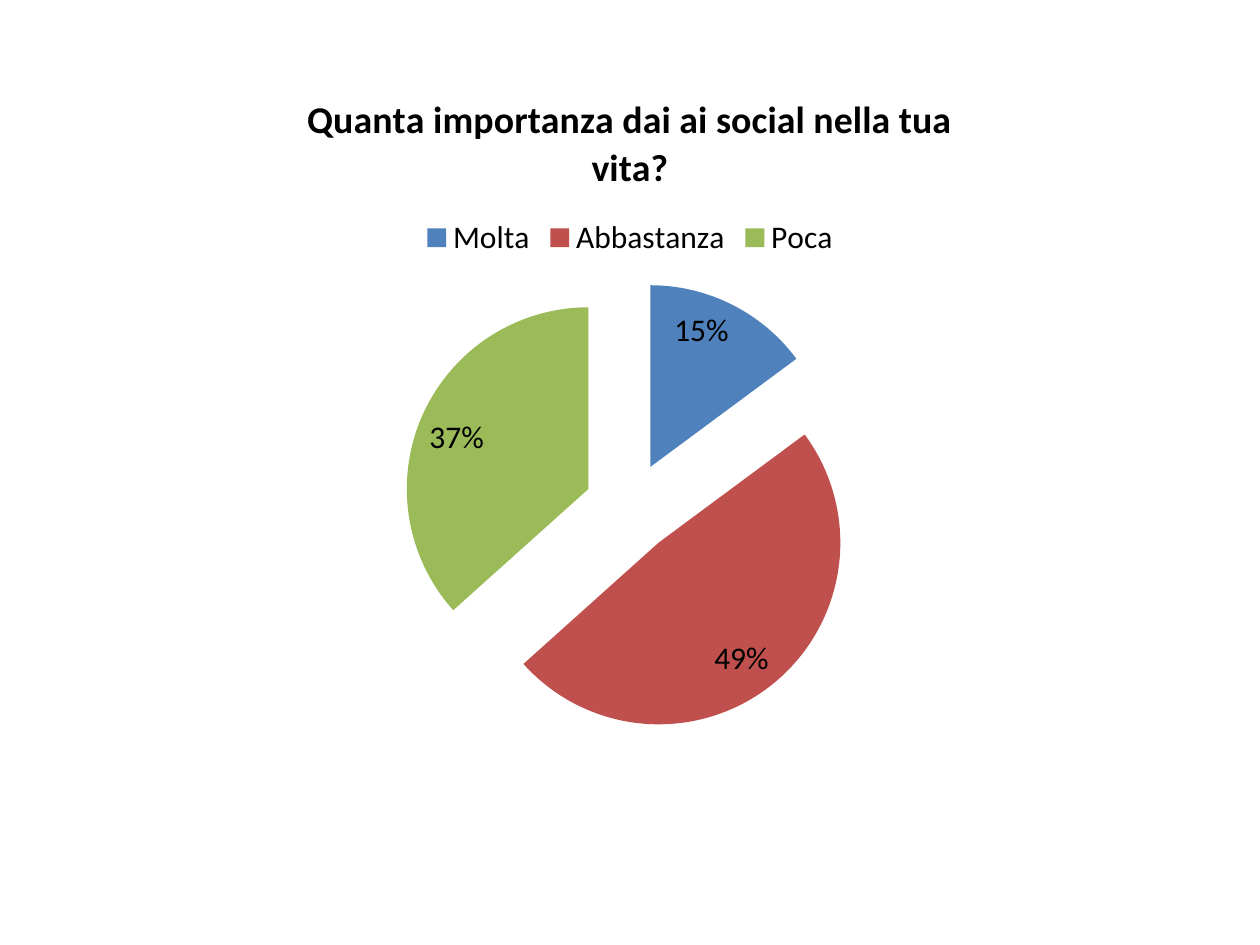
from dataclasses import dataclass

from lxml import etree
from pptx import Presentation
from pptx import util as u
from pptx.chart import data
from pptx.dml import color
from pptx.enum import chart as ch
from pptx.oxml import ns


@dataclass(frozen=True)
class Theme:
    font: str = "Calibri"
    ink: str = "000000"
    title_size: float = 21.6
    body_size: float = 18
    slices: tuple = ("4F81BD", "C0504D", "9BBB59")


THEME = Theme()
EXPLOSION = 25
QUESTION = "Quanta importanza dai ai social nella tua vita?"
ANSWERS = {"Molta": 15, "Abbastanza": 49, "Poca": 37}


def format_font(font, size=THEME.body_size, bold=False, ink=THEME.ink):
    font.name = THEME.font
    font.size = u.Pt(size)
    font.bold = bold
    font.color.rgb = color.RGBColor.from_string(ink)


def write_text(frame, wording, **style):
    run = frame.paragraphs[0].add_run()
    run.text = wording
    format_font(run.font, **style)


def explode(series, percent):
    explosion = etree.Element(ns.qn("c:explosion"), val=str(percent))
    series._element.find(ns.qn("c:dPt")).addprevious(explosion)


def add_survey_pie(slide, left, top, width, height):
    answers = data.CategoryChartData()
    answers.categories = list(ANSWERS)
    answers.add_series("Series 1", list(ANSWERS.values()))
    pie = slide.shapes.add_chart(
        ch.XL_CHART_TYPE.PIE, left, top, width, height, answers
    ).chart
    format_font(pie.font)

    pie.has_title = True
    write_text(pie.chart_title.text_frame, QUESTION,
               size=THEME.title_size, bold=True)
    pie.chart_title.include_in_layout = False

    pie.has_legend = True
    pie.legend.position = ch.XL_LEGEND_POSITION.TOP
    pie.legend.include_in_layout = False
    format_font(pie.legend.font)

    plot = pie.plots[0]
    plot.vary_by_categories = True
    series = plot.series[0]
    for index, slice_color in enumerate(THEME.slices):
        fill = series.points[index].format.fill
        fill.solid()
        fill.fore_color.rgb = color.RGBColor.from_string(slice_color)
    explode(series, EXPLOSION)

    plot.has_data_labels = True
    labels = plot.data_labels
    labels.show_value = False
    labels.show_percentage = True
    labels.number_format = "0%"
    labels.number_format_is_linked = False
    labels.position = ch.XL_LABEL_POSITION.INSIDE_END
    format_font(labels.font)


def main():
    deck = Presentation()
    deck.slide_width, deck.slide_height = u.Cm(25.4), u.Cm(19.05)
    slide = deck.slides.add_slide(deck.slide_layouts[6])
    pie_width = u.Cm(16.93)
    add_survey_pie(slide, (deck.slide_width - pie_width) // 2, u.Cm(1.32),
                   pie_width, u.Cm(13.84))
    deck.save("out.pptx")


if __name__ == "__main__":
    main()
